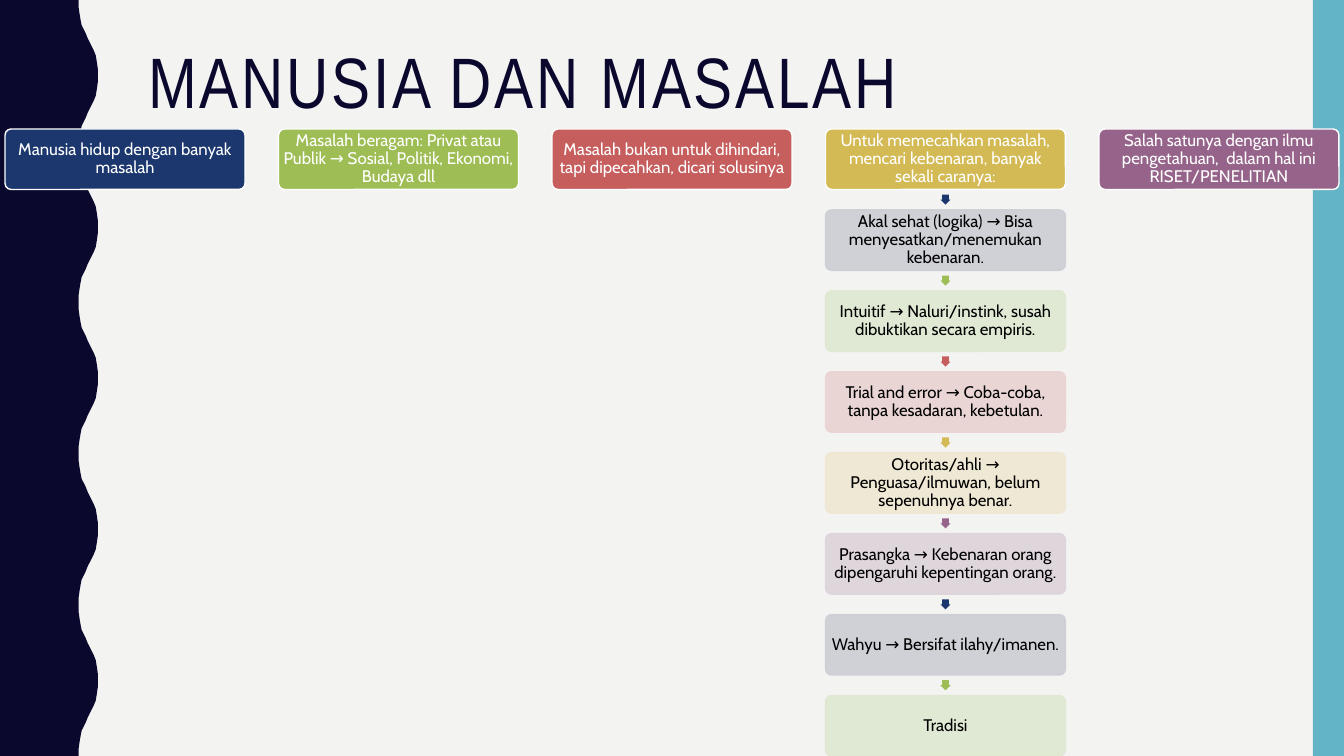
from dataclasses import dataclass

from lxml import etree
from pptx import Presentation
from pptx import util as u
from pptx.dml.color import RGBColor
from pptx.enum import shapes, text
from pptx.oxml.ns import qn


@dataclass(frozen=True)
class Theme:
    background: str = "F3F3F2"
    navy: str = "0B082E"
    edge: str = "62B4C6"
    white: str = "FFFFFF"
    black: str = "000000"
    accents: tuple = ("1B376E", "9EBE55", "C65E5E", "D3BA55", "96648A")
    tints: tuple = ("CDCED5", "DFE8D1", "EAD2D2", "EFE7D1", "DDD3DA")
    title_font: str = "Arial Narrow"
    body_font: str = "Cabin"
    title_size: int = 51
    body_size: int = 12
    line_width: int = 1
    line_spacing: float = 0.9


@dataclass(frozen=True)
class Box:
    left: float
    top: float
    width: float
    height: float

    def lengths(self):
        return [u.Inches(v) for v in (self.left, self.top, self.width, self.height)]


THEME = Theme()
TITLE = "MANUSIA DAN MASALAH"
STEPS = (
    "Manusia hidup dengan banyak masalah",
    "Masalah beragam: Privat atau Publik → Sosial, Politik, Ekonomi, Budaya dll",
    "Masalah bukan untuk dihindari, tapi dipecahkan, dicari solusinya",
    "Untuk memecahkan masalah, mencari kebenaran, banyak sekali caranya:",
    "Salah satunya dengan ilmu pengetahuan,  dalam hal ini RISET/PENELITIAN",
)
METHODS = (
    "Akal sehat (logika) → Bisa menyesatkan/menemukan kebenaran.",
    "Intuitif → Naluri/instink, susah dibuktikan secara empiris.",
    "Trial and error → Coba-coba, tanpa kesadaran, kebetulan.",
    "Otoritas/ahli → Penguasa/ilmuwan, belum sepenuhnya benar.",
    "Prasangka → Kebenaran orang dipengaruhi kepentingan orang.",
    "Wahyu → Bersifat ilahy/imanen.",
    "Tradisi",
)
METHODS_STEP = 3
CARD_WIDTH, CARD_HEIGHT = 2.38, 0.6
ARROW_SIZE = 0.1
WAVE_PERIOD = 1.5
WAVE_RISE = (
    (0.78, 0), (0.78, 0.07), (0.79, 0.14), (0.8, 0.2), (0.81, 0.25),
    (0.83, 0.29), (0.85, 0.33), (0.87, 0.38), (0.89, 0.42), (0.91, 0.46),
    (0.93, 0.5), (0.95, 0.55), (0.96, 0.61), (0.97, 0.68), (0.97, 0.75),
)


def paint(shape, fill, line=None, opacity=100):
    shape.shadow.inherit = False
    shape.fill.solid()
    shape.fill.fore_color.rgb = RGBColor.from_string(fill)
    if line is None:
        shape.line.fill.background()
    else:
        shape.line.color.rgb = RGBColor.from_string(line)
        shape.line.width = u.Pt(THEME.line_width)
    if opacity < 100:
        for color in shape._element.spPr.iter(qn("a:srgbClr")):
            etree.SubElement(color, qn("a:alpha")).set("val", str(opacity * 1000))


def write(frame, words, font, size, color, alignment):
    frame.word_wrap = True
    paragraph = frame.paragraphs[0]
    paragraph.alignment = alignment
    paragraph.line_spacing = THEME.line_spacing
    run = paragraph.add_run()
    run.text = words
    run.font.name = font
    run.font.size = u.Pt(size)
    run.font.color.rgb = RGBColor.from_string(color)
    return run


def add_wave(slide, box):
    periods = round(box.height / WAVE_PERIOD)
    cycle = WAVE_RISE + tuple((x, WAVE_PERIOD - y) for x, y in WAVE_RISE[-2::-1])
    outline = [(x, y + n * WAVE_PERIOD) for n in range(periods) for x, y in cycle]
    points = [(box.left + x, box.top + y) for x, y in outline]
    points.append((box.left, box.top + box.height))
    builder = slide.shapes.build_freeform(u.Inches(box.left), u.Inches(box.top))
    builder.add_line_segments([(u.Inches(x), u.Inches(y)) for x, y in points])
    paint(builder.convert_to_shape(), THEME.navy)


def add_edge(slide, box):
    edge = slide.shapes.add_shape(shapes.MSO_SHAPE.RECTANGLE, *box.lengths())
    paint(edge, THEME.edge)


def add_title(slide, box):
    frame = slide.shapes.add_textbox(*box.lengths()).text_frame
    frame.vertical_anchor = text.MSO_ANCHOR.TOP
    run = write(frame, TITLE, THEME.title_font, THEME.title_size,
                THEME.navy, text.PP_ALIGN.LEFT)
    run.font._element.set("spc", "200")


def add_card(slide, box, words, fill, line, color, opacity=100):
    card = slide.shapes.add_shape(shapes.MSO_SHAPE.ROUNDED_RECTANGLE, *box.lengths())
    card.adjustments[0] = 0.1
    paint(card, fill, line, opacity)
    frame = card.text_frame
    frame.margin_left = frame.margin_right = u.Inches(0.02)
    frame.margin_top = frame.margin_bottom = u.Inches(0.02)
    frame.vertical_anchor = text.MSO_ANCHOR.MIDDLE
    write(frame, words, THEME.body_font, THEME.body_size, color, text.PP_ALIGN.CENTER)


def add_arrow(slide, box, fill):
    arrow = slide.shapes.add_shape(shapes.MSO_SHAPE.RIGHT_ARROW, *box.lengths())
    arrow.rotation = 90
    arrow.adjustments[0] = 0.667
    arrow.adjustments[1] = 0.5
    paint(arrow, fill)


def add_methods(slide, box):
    pitch = box.height / len(METHODS)
    gap = pitch - CARD_HEIGHT
    for index, words in enumerate(METHODS):
        top = box.top + index * pitch
        hue = index % len(THEME.accents)
        arrow = Box(box.left + (box.width - ARROW_SIZE) / 2,
                    top + (gap - ARROW_SIZE) / 2, ARROW_SIZE, ARROW_SIZE)
        add_arrow(slide, arrow, THEME.accents[hue])
        card = Box(box.left, top + gap, box.width, CARD_HEIGHT)
        add_card(slide, card, words, THEME.tints[hue], THEME.tints[hue],
                 THEME.black, opacity=90)


def add_steps(slide, box):
    pitch = (box.width - CARD_WIDTH) / (len(STEPS) - 1)
    for index, (words, accent) in enumerate(zip(STEPS, THEME.accents)):
        left = box.left + index * pitch
        card = Box(left, box.top, CARD_WIDTH, CARD_HEIGHT)
        add_card(slide, card, words, accent, THEME.white, THEME.white)
        if index == METHODS_STEP:
            add_methods(slide, Box(left, box.top + CARD_HEIGHT, CARD_WIDTH,
                                   box.height - CARD_HEIGHT))


def main():
    presentation = Presentation()
    presentation.slide_width = u.Inches(13.33)
    presentation.slide_height = u.Inches(7.5)
    slide = presentation.slides.add_slide(presentation.slide_layouts[6])
    slide.background.fill.solid()
    slide.background.fill.fore_color.rgb = RGBColor.from_string(THEME.background)
    add_wave(slide, Box(0, 0, 0.97, 7.5))
    add_edge(slide, Box(13.02, 0, 0.31, 7.5))
    add_title(slide, Box(1.37, 0.42, 11.13, 1.63))
    add_steps(slide, Box(0.05, 1.28, 13.23, 6.22))
    presentation.save("out.pptx")


if __name__ == "__main__":
    main()
